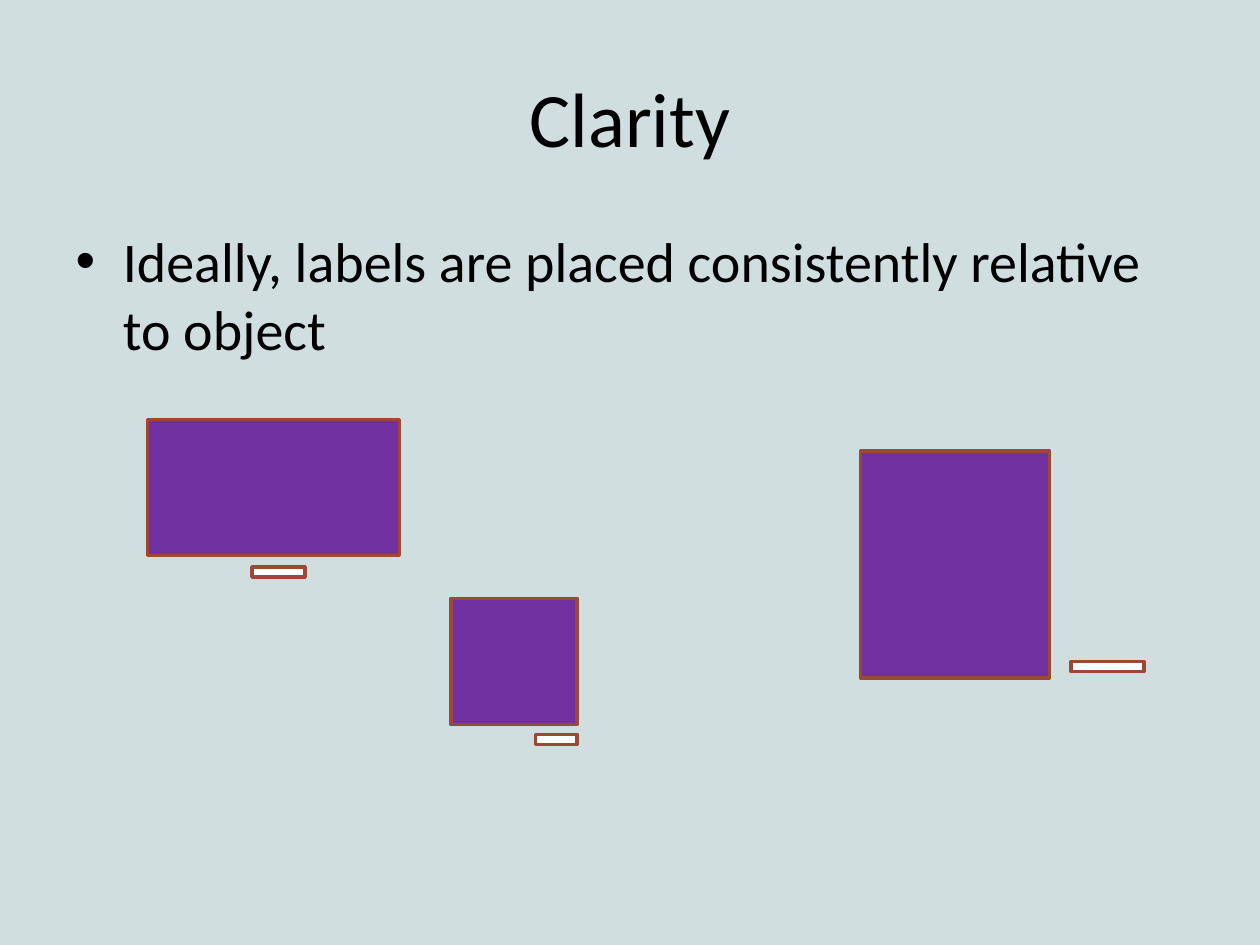
from pptx import Presentation
from pptx.dml.color import RGBColor
from pptx.enum.shapes import MSO_SHAPE
from pptx.enum.text import MSO_ANCHOR, PP_ALIGN
from pptx.util import Inches, Pt

BACK = RGBColor(0xD1, 0xDE, 0xDF)
BLACK = RGBColor(0, 0, 0)
WHITE = RGBColor(0xFF, 0xFF, 0xFF)
PURPLE = RGBColor(0x70, 0x30, 0xA0)
BROWN = RGBColor(0x9B, 0x49, 0x36)

TITLE = "Clarity"
POINT = "Ideally, labels are placed consistently relative to object"

# Each object (left, top, width, height) with its label (left, top, width)
PAIRS = [
    ((1.17, 3.33, 2, 1.08), (2, 4.5, 0.42)),
    ((3.58, 4.75, 1, 1), (4.25, 5.83, 0.33)),
    ((6.83, 3.58, 1.5, 1.8), (8.5, 5.25, 0.58)),
]
LABEL_H = 0.08


def place(shape, left, top, width, height):
    shape.left, shape.top = Inches(left), Inches(top)
    shape.width, shape.height = Inches(width), Inches(height)


def write(para, text, size):
    para.space_before = Pt(0)
    run = para.add_run()
    run.text = text
    run.font.name = "Calibri"
    run.font.size = Pt(size)
    run.font.color.rgb = BLACK


def add_box(slide, box, color):
    shape = slide.shapes.add_shape(
        MSO_SHAPE.RECTANGLE, *[Inches(n) for n in box])
    shape.shadow.inherit = False
    shape.fill.solid()
    shape.fill.fore_color.rgb = color
    shape.line.color.rgb = BROWN
    shape.line.width = Pt(2)


def main():
    deck = Presentation()
    deck.slide_width, deck.slide_height = Inches(10), Inches(7.5)
    slide = deck.slides.add_slide(deck.slide_layouts[1])
    slide.background.fill.solid()
    slide.background.fill.fore_color.rgb = BACK

    title, body = slide.placeholders
    place(title, 0.5, 0.3, 9, 1.25)
    title.text_frame.vertical_anchor = MSO_ANCHOR.MIDDLE
    head = title.text_frame.paragraphs[0]
    head.alignment = PP_ALIGN.CENTER
    write(head, TITLE, 44)

    place(body, 0.5, 1.75, 9, 4.95)
    write(body.text_frame.paragraphs[0], POINT, 32)

    for item, label in PAIRS:
        add_box(slide, item, PURPLE)
        add_box(slide, (*label, LABEL_H), WHITE)

    deck.save("out.pptx")


if __name__ == "__main__":
    main()
